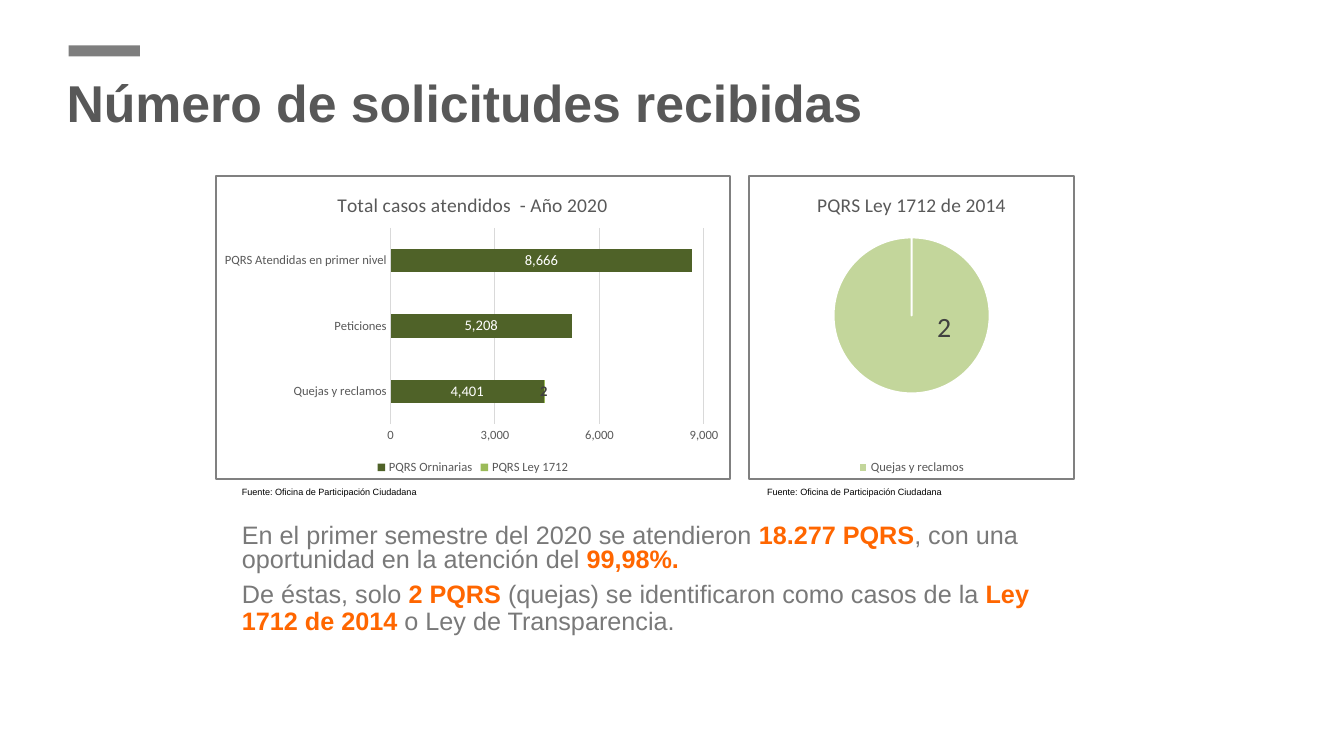
"""Build the slide on the number of requests received."""
from lxml.etree import fromstring
from pptx import Presentation
from pptx.chart.data import CategoryChartData
from pptx.dml.color import RGBColor
from pptx.enum.chart import (XL_CHART_TYPE, XL_LABEL_POSITION,
                             XL_LEGEND_POSITION, XL_TICK_MARK)
from pptx.enum.shapes import MSO_SHAPE
from pptx.enum.text import MSO_ANCHOR, PP_ALIGN
from pptx.util import Pt

BLACK = RGBColor(0x00, 0x00, 0x00)
WHITE = RGBColor(0xFF, 0xFF, 0xFF)
ACCENT_GREY = RGBColor(0x7E, 0x7E, 0x7E)
TITLE_GREY = RGBColor(0x58, 0x58, 0x58)
BODY_GREY = RGBColor(0x79, 0x79, 0x79)
CHART_GREY = RGBColor(0x59, 0x59, 0x59)
LABEL_GREY = RGBColor(0x40, 0x40, 0x40)
GRID_GREY = RGBColor(0xD9, 0xD9, 0xD9)
ORANGE = RGBColor(0xFF, 0x66, 0x00)
DARK_GREEN = RGBColor(0x4F, 0x62, 0x28)
MID_GREEN = RGBColor(0x9B, 0xBB, 0x59)
PALE_GREEN = RGBColor(0xC3, 0xD6, 0x9B)

HEADING = "Número de solicitudes recibidas"
SOURCE = "Fuente: Oficina de Participación Ciudadana"
SUMMARY = [
    [("En el primer semestre del 2020 se atendieron ", False),
     ("18.277 PQRS", True),
     (", con una oportunidad en la atención del ", False),
     ("99,98%.", True)],
    [("De éstas, solo ", False), ("2 PQRS ", True),
     ("(quejas) se identificaron como casos de la ", False),
     ("Ley 1712 de 2014 ", True), ("o Ley de Transparencia.", False)],
]
SUMMARY_SPACING = [
    {"line_spacing": 0.8},
    {"line_spacing": Pt(19.4), "space_before": Pt(5.7)},
]
CASES = {
    "title": "Total casos atendidos  - Año 2020",
    "kind": XL_CHART_TYPE.BAR_STACKED,
    "categories": ["Quejas y reclamos", "Peticiones",
                   "PQRS Atendidas en primer nivel"],
    "series": {"PQRS Orninarias": (4401, 5208, 8666),
               "PQRS Ley 1712": (2, 0, None)},
    "left": 153.4, "width": 368.6,
    "plot": (0.34, 0.17, 0.61, 0.65),
}
LAW = {
    "title": "PQRS Ley 1712 de 2014",
    "kind": XL_CHART_TYPE.PIE,
    "categories": ["Peticiones", "Quejas y reclamos"],
    "series": {"Series 1": (0, 2)},
    "left": 534.2, "width": 234,
    "plot": (0.26, 0.2, 0.48, 0.52),
}
CHART_TOP, CHART_HEIGHT = 125.3, 217.4
SOURCE_LEFTS = (172.8, 547.9)

CHART_NS = "http://schemas.openxmlformats.org/drawingml/2006/chart"
DRAWING_NS = "http://schemas.openxmlformats.org/drawingml/2006/main"
C = "{" + CHART_NS + "}"


def chart_xml(markup):
    return fromstring(f'<c:root xmlns:c="{CHART_NS}" xmlns:a="{DRAWING_NS}">'
                      f'{markup}</c:root>')[0]


def solid(colour):
    return f'<a:solidFill><a:srgbClr val="{colour}"/></a:solidFill>'


def manual_layout(**values):
    settings = "".join(f'<c:{key} val="{value}"/>' for key, value in values.items())
    return chart_xml(f"<c:layout><c:manualLayout>{settings}"
                     "</c:manualLayout></c:layout>")


def apply(target, **values):
    for name, value in values.items():
        setattr(target, name, value)


def style_font(font, size, colour, name="Calibri", bold=False):
    apply(font, size=Pt(size), name=name, bold=bold)
    font.color.rgb = colour


def paint(fill, colour):
    fill.solid()
    fill.fore_color.rgb = colour


def style_line(line, colour, width):
    line.color.rgb = colour
    line.width = Pt(width)


def prepare_frame(frame, top_margin):
    apply(frame, word_wrap=True, vertical_anchor=MSO_ANCHOR.TOP, margin_left=0,
          margin_right=0, margin_bottom=0, margin_top=Pt(top_margin))


def add_text(slide, box, top_margin):
    frame = slide.shapes.add_textbox(*map(Pt, box)).text_frame
    prepare_frame(frame, top_margin)
    return frame


def add_framed_chart(slide, content):
    data = CategoryChartData(number_format="#,##0")
    data.categories = content["categories"]
    for name, values in content["series"].items():
        data.add_series(name, values)
    chart = slide.shapes.add_chart(
        content["kind"], Pt(content["left"]), Pt(CHART_TOP),
        Pt(content["width"]), Pt(CHART_HEIGHT), data).chart
    style_font(chart.font, 10, BLACK)
    apply(chart, has_title=True, has_legend=True)
    heading = chart.chart_title.text_frame
    heading.text = content["title"]
    style_font(heading.paragraphs[0].runs[0].font, 14, CHART_GREY)
    apply(chart.legend, position=XL_LEGEND_POSITION.BOTTOM, include_in_layout=False)
    style_font(chart.legend.font, 9, CHART_GREY)
    chart.element.find(C + "chart").addnext(chart_xml(
        f'<c:spPr>{solid(WHITE)}<a:ln w="19050">{solid("808080")}</a:ln></c:spPr>'))
    area = chart.element.find(f".//{C}plotArea")
    for old in area.findall(C + "layout"):
        area.remove(old)
    x, y, w, h = content["plot"]
    area.insert(0, manual_layout(layoutTarget="inner", xMode="edge", yMode="edge",
                                 x=x, y=y, w=w, h=h))
    return chart


def label_point(series, index, size, bold, extra):
    series.data_labels.show_value = False
    label = series.points[index].data_label
    style_font(label.font, size, LABEL_GREY, bold=bold)
    label.position = XL_LABEL_POSITION.CENTER
    series.data_labels._element.find(f"{C}dLbl/{C}idx").addnext(extra)


def add_cases_chart(slide):
    chart = add_framed_chart(slide, CASES)
    apply(chart.plots[0], gap_width=182, overlap=100, vary_by_categories=False)
    ordinary, law = chart.plots[0].series
    paint(ordinary.format.fill, DARK_GREEN)
    paint(law.format.fill, MID_GREEN)
    apply(ordinary.data_labels, show_value=True, number_format="#,##0",
          number_format_is_linked=False, position=XL_LABEL_POSITION.CENTER)
    style_font(ordinary.data_labels.font, 10.5, WHITE)
    label_point(law, 0, 10.5, True, chart_xml(f"<c:spPr>{solid(MID_GREEN)}</c:spPr>"))
    for axis in (chart.category_axis, chart.value_axis):
        apply(axis, major_tick_mark=XL_TICK_MARK.NONE, minor_tick_mark=XL_TICK_MARK.NONE)
        style_font(axis.tick_labels.font, 9, CHART_GREY)
    style_line(chart.category_axis.format.line, GRID_GREY, 0.75)
    values = chart.value_axis
    apply(values, minimum_scale=0, maximum_scale=9000, major_unit=3000,
          has_major_gridlines=True)
    apply(values.tick_labels, number_format="#,##0", number_format_is_linked=False)
    values.format.line.fill.background()
    style_line(values.major_gridlines.format.line, GRID_GREY, 0.75)


def add_law_chart(slide):
    chart = add_framed_chart(slide, LAW)
    requests = chart.plots[0].series[0]
    for index in range(len(LAW["categories"])):
        part = requests.points[index].format
        paint(part.fill, PALE_GREEN)
        style_line(part.line, WHITE, 1.5)
    label_point(requests, 1, 20, False, manual_layout(x=0.1, y=-0.09))
    chart.element.find(f".//{C}legendPos").addnext(chart_xml(
        '<c:legendEntry><c:idx val="0"/><c:delete val="1"/></c:legendEntry>'))


def main():
    deck = Presentation()
    apply(deck, slide_width=Pt(960), slide_height=Pt(540))
    slide = deck.slides.add_slide(deck.slide_layouts[5])

    accent = slide.shapes.add_shape(MSO_SHAPE.RECTANGLE, Pt(49), Pt(32.4), Pt(51), Pt(8))
    accent.shadow.inherit = False
    paint(accent.fill, ACCENT_GREY)
    accent.line.fill.background()

    title = slide.shapes.title
    apply(title, left=Pt(47.5), top=Pt(49.7), width=Pt(580), height=Pt(46))
    prepare_frame(title.text_frame, 1)
    title.text_frame.text = HEADING
    heading = title.text_frame.paragraphs[0]
    apply(heading, alignment=PP_ALIGN.LEFT, space_before=Pt(0))
    style_font(heading.runs[0].font, 37, TITLE_GREY, "Arial", True)

    add_cases_chart(slide)
    add_law_chart(slide)
    for left in SOURCE_LEFTS:
        source = add_text(slide, (left, 346.3, 132, 10), 1.2)
        source.text = SOURCE
        style_font(source.paragraphs[0].runs[0].font, 6.5, BLACK, "Arial")

    summary = add_text(slide, (172.8, 370, 573.8, 85.7), 5)
    for index, (parts, spacing) in enumerate(zip(SUMMARY, SUMMARY_SPACING)):
        sentence = summary.add_paragraph() if index else summary.paragraphs[0]
        apply(sentence, **spacing)
        for words, key_fact in parts:
            run = sentence.add_run()
            run.text = words
            style_font(run.font, 18, ORANGE if key_fact else BODY_GREY, "Arial", key_fact)
    deck.save("out.pptx")


if __name__ == "__main__":
    main()
